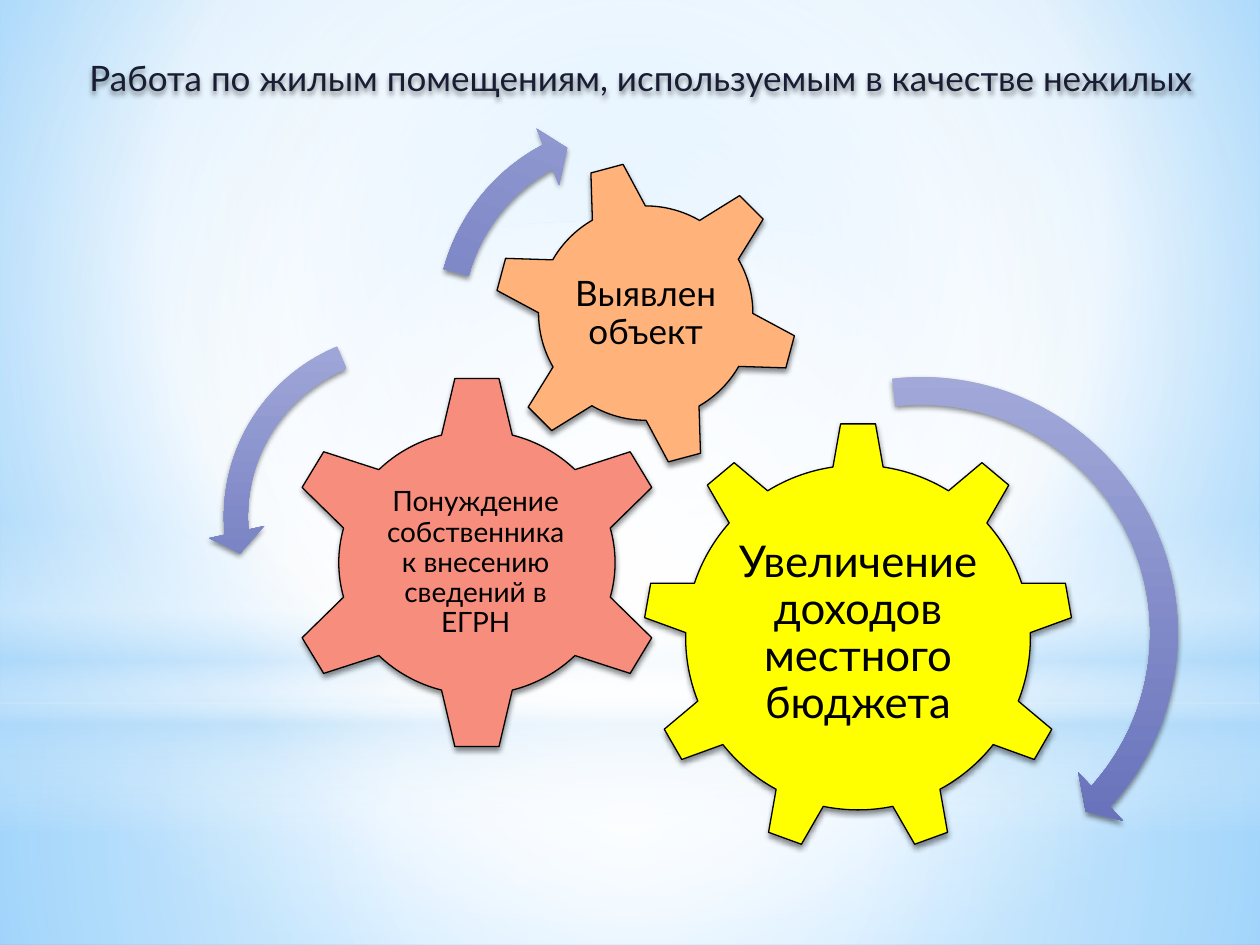
"""Slide with three interlocking gears on housing inspection work."""
from lxml.etree import SubElement
from pptx import Presentation
from pptx.dml.color import RGBColor
from pptx.enum.shapes import MSO_SHAPE as Shape
from pptx.enum.text import MSO_ANCHOR as Anchor, MSO_AUTO_SIZE as AutoSize, PP_ALIGN as Align
from pptx.oxml.ns import qn
from pptx.util import Inches, Pt

color = RGBColor.from_string


def paint_gradient(fill, owner, stops, focus=None):
    """Fill with (position, colour, opacity) stops, round a focus or downwards."""
    fill.gradient()
    gradient = owner.find(".//" + qn("a:gradFill"))
    gradient.clear()
    gradient.set("rotWithShape", "1")
    stop_list = SubElement(gradient, qn("a:gsLst"))
    for position, shade, opacity in stops:
        stop = SubElement(stop_list, qn("a:gs"), pos=str(position * 1000))
        tint = SubElement(stop, qn("a:srgbClr"), val=shade)
        if opacity < 100:
            SubElement(tint, qn("a:alpha"), val=str(opacity * 1000))
    if focus:
        circle = SubElement(gradient, qn("a:path"), path="circle")
        edges = {side: str(share * 1000) for side, share in zip("ltrb", focus)}
        SubElement(circle, qn("a:fillToRect"), **edges)
    else:
        SubElement(gradient, qn("a:lin"), ang="5400000", scaled="0")


def add_shadow(shape):
    """Give a shape a soft shadow below."""
    shape.shadow.inherit = False
    effects = shape.element.spPr.find(qn("a:effectLst"))
    shadow = SubElement(effects, qn("a:outerShdw"), blurRad=str(Pt(3.1)), dist=str(Pt(1.8)),
                        dir="5400000", rotWithShape="0")
    tint = SubElement(shadow, qn("a:srgbClr"), val="000000")
    SubElement(tint, qn("a:alpha"), val="45000")


deck = Presentation()
deck.slide_width, deck.slide_height = Inches(10), Inches(7.5)
page = deck.slides.add_slide(deck.slide_layouts[5])
WHITE, SKY, BLACK, FONT = "FFFFFF", "B4DCFA", "000000", "Lato"
CENTER = (50, 50, 50, 50)

paint_gradient(page.background.fill, page.element,
               [(0, "9ED5FF", 100), (60, WHITE, 100), (100, "5BB9FF", 100)], (20, 10, 20, 60))

backdrops = [
    (Shape.RECTANGLE, 5.58, 1.92, [(0, WHITE, 91), (37, WHITE, 76), (100, SKY, 79)], CENTER),
    (Shape.RECTANGLE, 0, 5.58, [(0, WHITE, 89), (48, WHITE, 62), (100, SKY, 79)], CENTER),
    (Shape.RECTANGLE, 4.12, 2.5, [(0, WHITE, 0), (29, WHITE, 30), (45, SKY, 40), (55, WHITE, 26),
                                  (65, SKY, 60), (100, WHITE, 0)], None),
    (Shape.OVAL, 1.75, 5.58, [(0, WHITE, 100), (56, WHITE, 0)], CENTER),
]
for kind, top, height, stops, focus in backdrops:
    backdrop = page.shapes.add_shape(kind, 0, Inches(top), deck.slide_width, Inches(height))
    backdrop.shadow.inherit = False
    backdrop.line.fill.background()
    paint_gradient(backdrop.fill, backdrop.element, stops, focus)

gears = [
    (Shape.GEAR_9, (5.1, 3.35, 3.42, 3.42), 0, "FFFF00",
     "Увеличение доходов местного бюджета", (5.79, 4.15, 2.04, 1.76), 25),
    (Shape.GEAR_6, (2.24, 2.97, 3.09, 2.99), 0, "F78D7C",
     "Понуждение собственника к внесению сведений в ЕГРН", (3, 3.73, 1.55, 1.48), 16),
    (Shape.GEAR_6, (3.91, 1.27, 2.43, 2.43), 345, "FFB37A",
     "Выявлен объект", (4.44, 1.81, 1.37, 1.37), 20),
]
for kind, frame, turn, shade, label, label_frame, size in gears:
    gear = page.shapes.add_shape(kind, *map(Inches, frame))
    gear.rotation = turn
    gear.fill.solid()
    gear.fill.fore_color.rgb = color(shade)
    gear.line.color.rgb = color(BLACK)
    gear.line.width = Pt(0.75)
    add_shadow(gear)

    box = page.shapes.add_textbox(*map(Inches, label_frame)).text_frame
    box.word_wrap = True
    box.vertical_anchor = Anchor.MIDDLE
    box.margin_left = box.margin_right = box.margin_top = box.margin_bottom = Inches(0.03)
    para = box.paragraphs[0]
    para.alignment = Align.CENTER
    para.line_spacing = 0.9
    span = para.add_run()
    span.text = label
    span.font.size = Pt(size)
    span.font.name = FONT
    span.font.color.rgb = color(BLACK)

arrows = [
    (Shape.CIRCULAR_ARROW, (5.13, 2.84, 4.37), 0, (0.05, 2.99, 25.43, 158.05, 0.06)),
    (Shape.LEFT_CIRCULAR_ARROW, (1.65, 2.51, 3.18), 0, (0.06, 4.3, 104.89, 148.38, 0.07)),
    (Shape.CIRCULAR_ARROW, (3.33, 0.83, 3.43), 19.9, (0.06, 3.94, 133.14, 105.08, 0.07)),
]
for kind, (left, top, side), turn, bends in arrows:
    arrow = page.shapes.add_shape(kind, *map(Inches, (left, top, side, side)))
    arrow.rotation = turn
    for index, bend in enumerate(bends):
        arrow.adjustments[index] = bend
    arrow.line.fill.background()
    paint_gradient(arrow.fill, arrow.element, [(0, "A4ABDA", 100), (100, "5C68B5", 100)])
    add_shadow(arrow)

title = page.shapes.title
title.left, title.top, title.width, title.height = map(Inches, (0.51, 0.23, 9.23, 0.77))
title.element.getparent().append(title.element)
add_shadow(title)
heading = title.text_frame
heading.word_wrap = True
heading.auto_size = AutoSize.NONE
heading.vertical_anchor = Anchor.MIDDLE
para = heading.paragraphs[0]
para.alignment = Align.CENTER
span = para.add_run()
span.text = "Работа по жилым помещениям, используемым в качестве нежилых "
span.font.size = Pt(20)
span.font.name = FONT
span.font.color.rgb = color("191D34")

deck.save("out.pptx")
